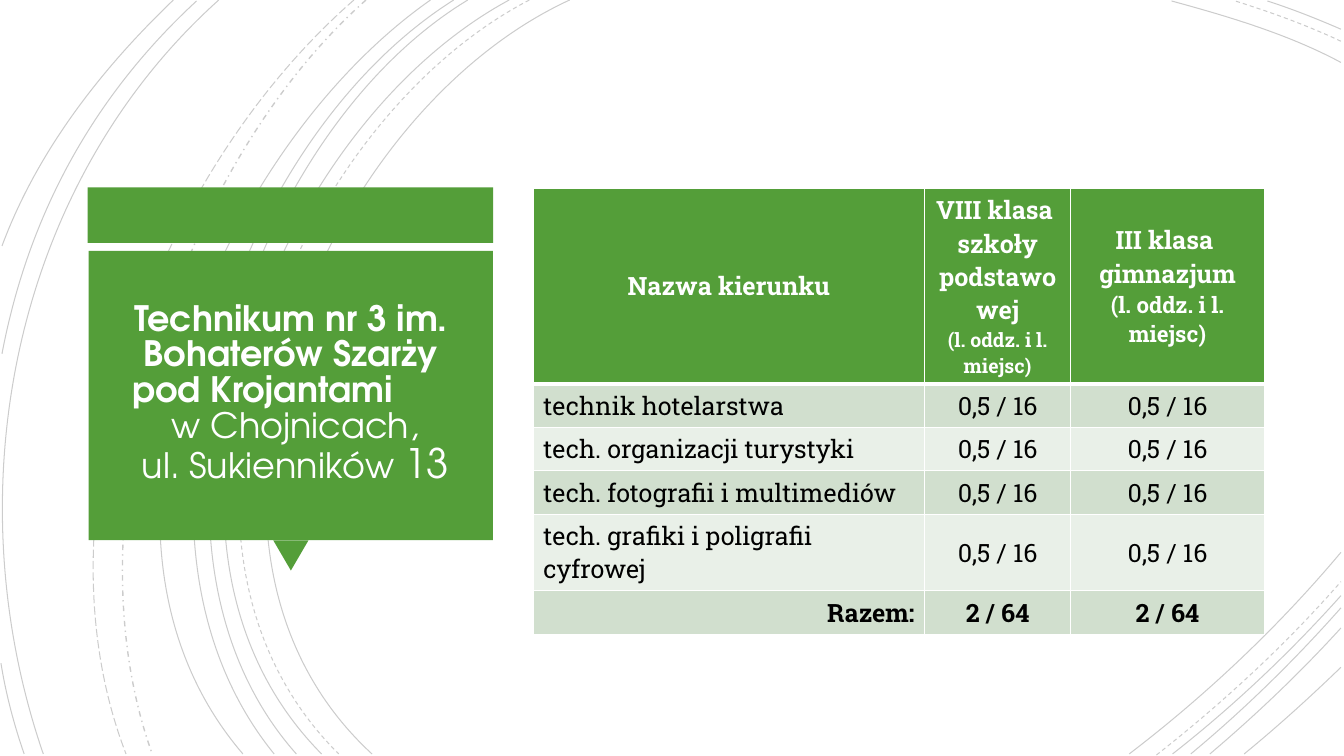
"""Build the slide with the admission table of a technical school."""
import pptx
import pptx.util
import pptx.dml.color
import pptx.enum.dml
import pptx.enum.shapes
import pptx.enum.text
import pptx.oxml
import pptx.oxml.ns

PX = 9144
WHITE = pptx.dml.color.RGBColor(0xFF, 0xFF, 0xFF)
BLACK = pptx.dml.color.RGBColor(0x00, 0x00, 0x00)
GREEN = pptx.dml.color.RGBColor(0x54, 0x9E, 0x39)
BAND_DARK = pptx.dml.color.RGBColor(0xD1, 0xDF, 0xCE)
BAND_LIGHT = pptx.dml.color.RGBColor(0xE9, 0xF0, 0xE8)

ALIGN = pptx.enum.text.PP_ALIGN
ANCHOR = pptx.enum.text.MSO_ANCHOR
DASH = pptx.enum.dml.MSO_LINE
SHAPE = pptx.enum.shapes.MSO_SHAPE
qn = pptx.oxml.ns.qn

TABLE_FONT = "Roboto Slab"
TITLE_FONT = "TeX Gyre Adventor"

SOLID_ARCS = [
    [(565, 0), (315, 115), (143, 540), (369, 748)],
    [(1330, 62), (1278, 34), (1217, 16), (1162, 1)],
    [(1120, 748), (1196, 690), (1268, 622), (1330, 548)],
    [(505, 0), (270, 127), (110, 537), (319, 748)],
    [(1330, 29), (1307, 19), (1282, 9), (1257, 1)],
    [(1163, 748), (1223, 701), (1279, 648), (1330, 591)],
    [(464, 0), (244, 133), (110, 541), (294, 748)],
    [(1181, 748), (1234, 704), (1284, 655), (1330, 603)],
    [(450, 0), (231, 138), (97, 533), (272, 748)],
    [(1200, 748), (1246, 709), (1290, 667), (1330, 623)],
    [(427, 0), (217, 147), (53, 529), (241, 748)],
    [(1234, 748), (1267, 721), (1299, 692), (1330, 662)],
    [(217, 0), (11, 185), (-46, 490), (43, 748)],
    [(195, 1), (92, 96), (28, 214), (2, 351)],
    [(1, 658), (6, 689), (14, 719), (24, 748)],
    [(172, 0), (100, 69), (37, 150), (2, 244)],
]
DASHED_ARCS = [
    [(525, 0), (285, 125), (123, 537), (336, 748)],
    [(1330, 41), (1296, 25), (1260, 12), (1225, 1)],
    [(1147, 749), (1212, 698), (1275, 640), (1330, 577)],
]
DASH_DOT_ARCS = [[(363, 0), (176, 166), (65, 509), (151, 748)]]
LONG_DASH_ARCS = [[(351, 0), (157, 169), (29, 499), (125, 748)]]
ARC_STYLES = [
    (SOLID_ARCS, DASH.SOLID, 0.75),
    (DASHED_ARCS, DASH.DASH, 0.75),
    (DASH_DOT_ARCS, DASH.DASH_DOT, 1),
    (LONG_DASH_ARCS, DASH.LONG_DASH, 0.75),
]

HEADERS = [
    [("Nazwa kierunku", 18)],
    [("VIII klasa ", 18), ("szkoły podstawowej", 18), ("(l. oddz. i l. miejsc)", 14)],
    [("III klasa ", 18), ("gimnazjum", 18), ("(l. oddz. i l. miejsc)", 16)],
]
COURSES = [
    "technik hotelarstwa",
    "tech. organizacji turystyki",
    "tech. fotografii i multimediów",
    "tech. grafiki i poligrafii cyfrowej",
]
PLACES = "0,5 / 16"
TOTALS = ["Razem:", "2 / 64", "2 / 64"]


def px(*lengths):
    """Turn lengths in px into EMU."""
    return [pptx.util.Emu(length * PX) for length in lengths]


def apply(target, values):
    """Set each attribute of target from a dict."""
    for name, value in values.items():
        setattr(target, name, value)


def add_run(paragraph, text, size, font_name, color, bold):
    """Add a formatted run to a paragraph."""
    run = paragraph.add_run()
    run.text = text
    apply(run.font, {"name": font_name, "size": pptx.util.Pt(size), "bold": bold})
    run.font.color.rgb = color


def add_arc(shapes, points, dash, width):
    """Add an open cubic curve from its four control points."""
    start, *others = points
    builder = shapes.build_freeform(*start, scale=PX)
    builder.add_line_segments(others, close=False)
    arc = builder.convert_to_shape()
    arc.shadow.inherit = False
    arc.fill.background()
    arc.line.color.rgb = BLACK
    apply(arc.line, {"width": pptx.util.Pt(width), "dash_style": dash})
    color = arc.line._ln.find(".//" + qn("a:srgbClr"))
    color.append(color.makeelement(qn("a:alpha"), {"val": "20000"}))
    outline = arc._element.find(".//" + qn("a:path"))
    curve = outline.makeelement(qn("a:cubicBezTo"), {})
    for segment in outline.findall(qn("a:lnTo")):
        curve.append(segment[0])
        outline.remove(segment)
    outline.append(curve)


def add_panel(slide, preset, box, rotation=0):
    """Add a plain green shape."""
    panel = slide.shapes.add_shape(preset, *px(*box))
    panel.rotation = rotation
    panel.shadow.inherit = False
    panel.fill.solid()
    panel.fill.fore_color.rgb = GREEN
    panel.line.fill.background()


def set_borders(cell, widths):
    """Give a cell white borders: left, right, top, bottom in points."""
    properties = cell._tc.get_or_add_tcPr()
    for index, (side, width) in enumerate(zip("LRTB", widths)):
        properties.insert(index, pptx.oxml.parse_xml(
            f'<a:ln{side} {pptx.oxml.ns.nsdecls("a")} w="{width * 12700}">'
            f'<a:solidFill><a:srgbClr val="{WHITE}"/></a:solidFill></a:ln{side}>'))


def fill_cell(cell, lines, fill, color, bold, align, anchor, borders):
    """Write lines of (text, size) into a table cell and format it."""
    cell.fill.solid()
    cell.fill.fore_color.rgb = fill
    cell.vertical_anchor = anchor
    set_borders(cell, borders)
    for index, (text, size) in enumerate(lines):
        frame = cell.text_frame
        paragraph = frame.add_paragraph() if index else frame.paragraphs[0]
        paragraph.alignment = align
        add_run(paragraph, text, size, TABLE_FONT, color, bold)


def add_places_table(slide):
    """Add the table of courses and places."""
    rows = [[course, PLACES, PLACES] for course in COURSES] + [TOTALS]
    places = slide.shapes.add_table(len(rows) + 1, 3, *px(529, 187, 725, 378)).table
    apply(places, {"first_row": False, "horz_banding": False})
    for column, width in zip(places.columns, px(388, 145, 192)):
        column.width = width
    for row, height in zip(places.rows, px(177, 40, 40, 40, 41, 40)):
        row.height = height
    for column, lines in enumerate(HEADERS):
        fill_cell(places.cell(0, column), lines, GREEN, WHITE, True,
                  ALIGN.CENTER, ANCHOR.MIDDLE, (1, 1, 1, 3))
    for number, texts in enumerate(rows, 1):
        total = texts is TOTALS
        fill = BAND_DARK if number % 2 else BAND_LIGHT
        borders = (1, 1, 3 if number == 1 else 1, 1)
        for column, text in enumerate(texts):
            label_align = ALIGN.RIGHT if total else ALIGN.LEFT
            align = ALIGN.CENTER if column else label_align
            anchor = ANCHOR.MIDDLE if column and not total else ANCHOR.TOP
            fill_cell(places.cell(number, column), [(text, 18)], fill, BLACK,
                      total, align, anchor, borders)


def write_title(slide):
    """Place the school name and address in the title placeholder."""
    school = slide.shapes.title
    slide.shapes._spTree.append(school._element)
    apply(school, dict(zip(("left", "top", "width", "height"), px(97, 257, 383, 269))))
    frame = school.text_frame
    apply(frame, {"word_wrap": True, "vertical_anchor": ANCHOR.MIDDLE,
                  "auto_size": pptx.enum.text.MSO_AUTO_SIZE.NONE})
    margins = ("margin_left", "margin_top", "margin_right", "margin_bottom")
    apply(frame, dict(zip(margins, px(25, 25, 25, 25))))
    name, patron, address = frame.paragraphs[0], frame.add_paragraph(), frame.add_paragraph()
    for paragraph, align in ((name, ALIGN.CENTER), (patron, ALIGN.LEFT), (address, ALIGN.CENTER)):
        apply(paragraph, {"alignment": align, "line_spacing": 0.85,
                          "space_before": pptx.util.Pt(0)})
    patron._p.get_or_add_pPr().set("marL", str(9 * PX))
    add_run(name, "Technikum nr 3 im. Bohaterów Szarży", 25, TITLE_FONT, WHITE, True)
    add_run(patron, "pod Krojantami", 25, TITLE_FONT, WHITE, True)
    add_run(address, "w Chojnicach,", 25, TITLE_FONT, WHITE, False)
    address.add_line_break()
    add_run(address, "ul. Sukienników ", 25, TITLE_FONT, WHITE, False)
    add_run(address, "13", 29, TITLE_FONT, WHITE, False)


def main():
    """Build and save the slide."""
    deck = pptx.Presentation()
    deck.slide_width, deck.slide_height = px(1333, 750)
    slide = deck.slides.add_slide(deck.slide_layouts[5])
    arcs = slide.shapes.add_group_shape()
    for curves, dash, width in ARC_STYLES:
        for points in curves:
            add_arc(arcs.shapes, points, dash, width)
    add_panel(slide, SHAPE.RECTANGLE, (87, 186, 402, 55))
    add_panel(slide, SHAPE.ISOSCELES_TRIANGLE, (271, 536, 35, 30), 180)
    add_panel(slide, SHAPE.RECTANGLE, (88, 249, 401, 287))
    add_places_table(slide)
    write_title(slide)
    deck.save("out.pptx")


if __name__ == "__main__":
    main()
